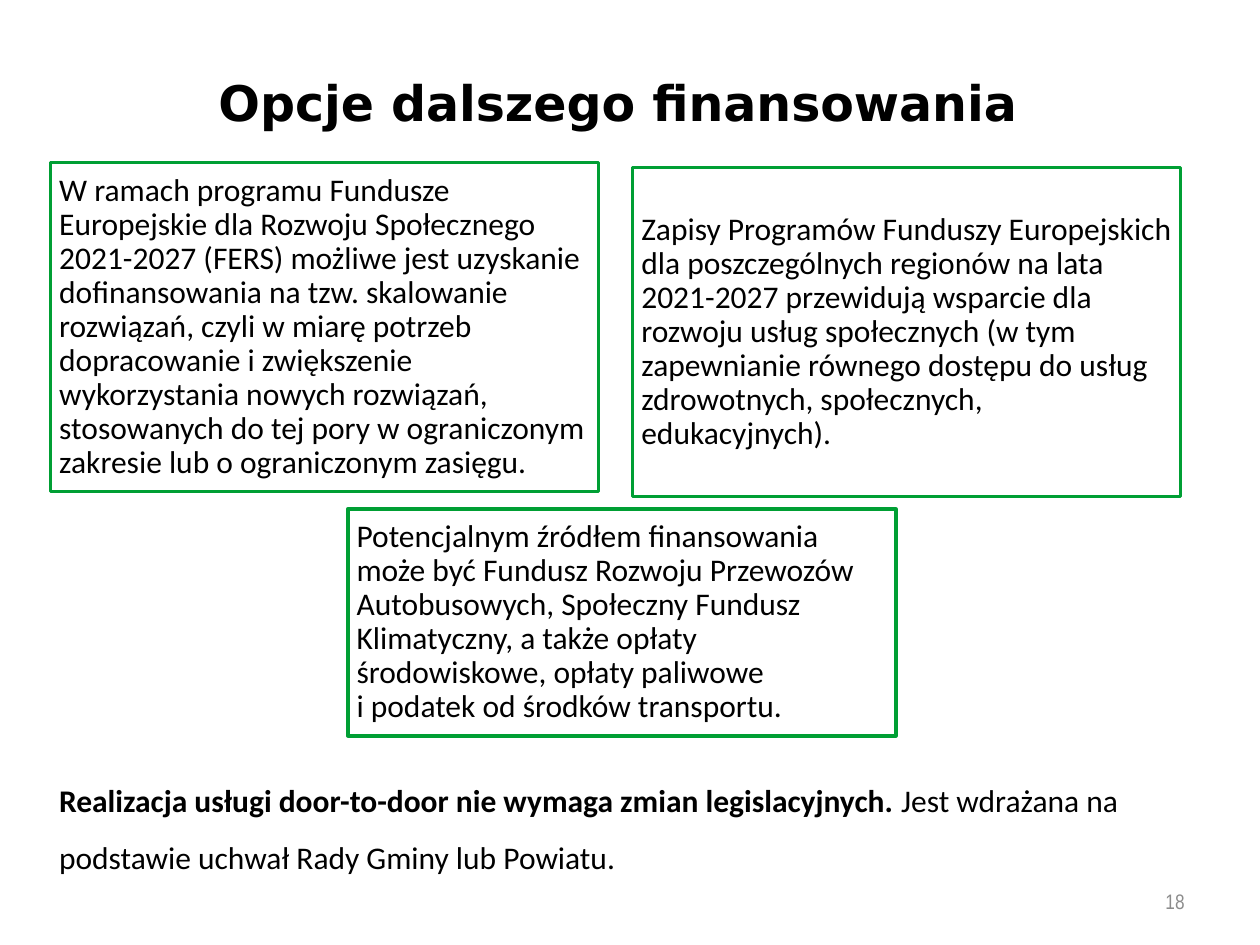
from pptx import Presentation
from pptx.dml.color import RGBColor as Color
from pptx.enum.shapes import MSO_SHAPE as Shape
from pptx.enum.text import MSO_ANCHOR as Anchor, PP_ALIGN as Align
from pptx.util import Inches, Pt

COLORS = {"text": "000000", "box": "FFFFFF", "border": "009F34", "number": "8C8C8C"}

presentation = Presentation()
presentation.slide_width, presentation.slide_height = Inches(10), Inches(7.5)
slide = presentation.slides.add_slide(presentation.slide_layouts[6])


def format_run(run, size=18, font="Calibri", color="text", bold=False):
    run.font.size, run.font.name, run.font.bold = Pt(size), font, bold
    run.font.color.rgb = Color.from_string(COLORS[color])


def add_text(left, top, width, height, text, anchor, align, spacing=1.0, **style):
    box = slide.shapes.add_textbox(*map(Inches, (left, top, width, height)))
    box.text_frame.word_wrap = True
    box.text_frame.vertical_anchor = anchor
    box.text_frame.text = text
    paragraph = box.text_frame.paragraphs[0]
    paragraph.alignment, paragraph.line_spacing = align, spacing
    format_run(paragraph.runs[0], **style)
    return paragraph


# Title
add_text(0.47, 0.49, 9, 0.69, "Opcje dalszego finansowania ", Anchor.MIDDLE, Align.CENTER,
         spacing=0.9, size=28, font="DejaVu Sans", bold=True)

# Closing remark: bold statement followed by a plain sentence
remark = add_text(0.37, 5.9, 9.19, 1.1,
                  "Realizacja usługi door-to-door nie wymaga zmian legislacyjnych. ",
                  Anchor.BOTTOM, Align.LEFT, spacing=1.5, bold=True)
sentence = remark.add_run()
sentence.text = "Jest wdrażana na podstawie uchwał Rady Gminy lub Powiatu."
format_run(sentence)

# Funding options: left, top, height and text of equally wide boxes
BOX_WIDTH = 4.35
options = [
    (0.4, 1.29, 2.61,
     "W ramach programu Fundusze Europejskie dla Rozwoju Społecznego 2021-2027 (FERS) "
     "możliwe jest uzyskanie dofinansowania na tzw. skalowanie rozwiązań, czyli w miarę "
     "potrzeb dopracowanie i zwiększenie wykorzystania nowych rozwiązań, stosowanych do "
     "tej pory w ograniczonym zakresie lub o ograniczonym zasięgu."),
    (5.02, 1.33, 2.61,
     "Zapisy Programów Funduszy Europejskich dla poszczególnych regionów na lata 2021-2027 "
     "przewidują wsparcie dla rozwoju usług społecznych (w tym zapewnianie równego dostępu "
     "do usług zdrowotnych, społecznych, edukacyjnych)."),
    (2.76, 4.04, 1.8,
     "Potencjalnym źródłem finansowania może być Fundusz Rozwoju Przewozów Autobusowych, "
     "Społeczny Fundusz Klimatyczny, a także opłaty środowiskowe, opłaty paliwowe \v"
     "i podatek od środków transportu."),
]
for left, top, height, text in options:
    shape = slide.shapes.add_shape(Shape.RECTANGLE, *map(Inches, (left, top, BOX_WIDTH, height)))
    shape.shadow.inherit = False
    shape.fill.solid()
    shape.fill.fore_color.rgb = Color.from_string(COLORS["box"])
    shape.line.color.rgb = Color.from_string(COLORS["border"])
    shape.line.width = Pt(2)
    frame = shape.text_frame
    frame.word_wrap = True
    frame.vertical_anchor = Anchor.MIDDLE
    frame.margin_left = frame.margin_right = frame.margin_top = frame.margin_bottom = Inches(0.07)
    frame.text = text
    paragraph = frame.paragraphs[0]
    paragraph.alignment, paragraph.line_spacing = Align.LEFT, 0.9
    for run in paragraph.runs:
        format_run(run)

# Slide number
add_text(7.17, 6.95, 2.33, 0.4, "18", Anchor.MIDDLE, Align.RIGHT,
         size=12, font="Arial Narrow", color="number")

presentation.save("out.pptx")
